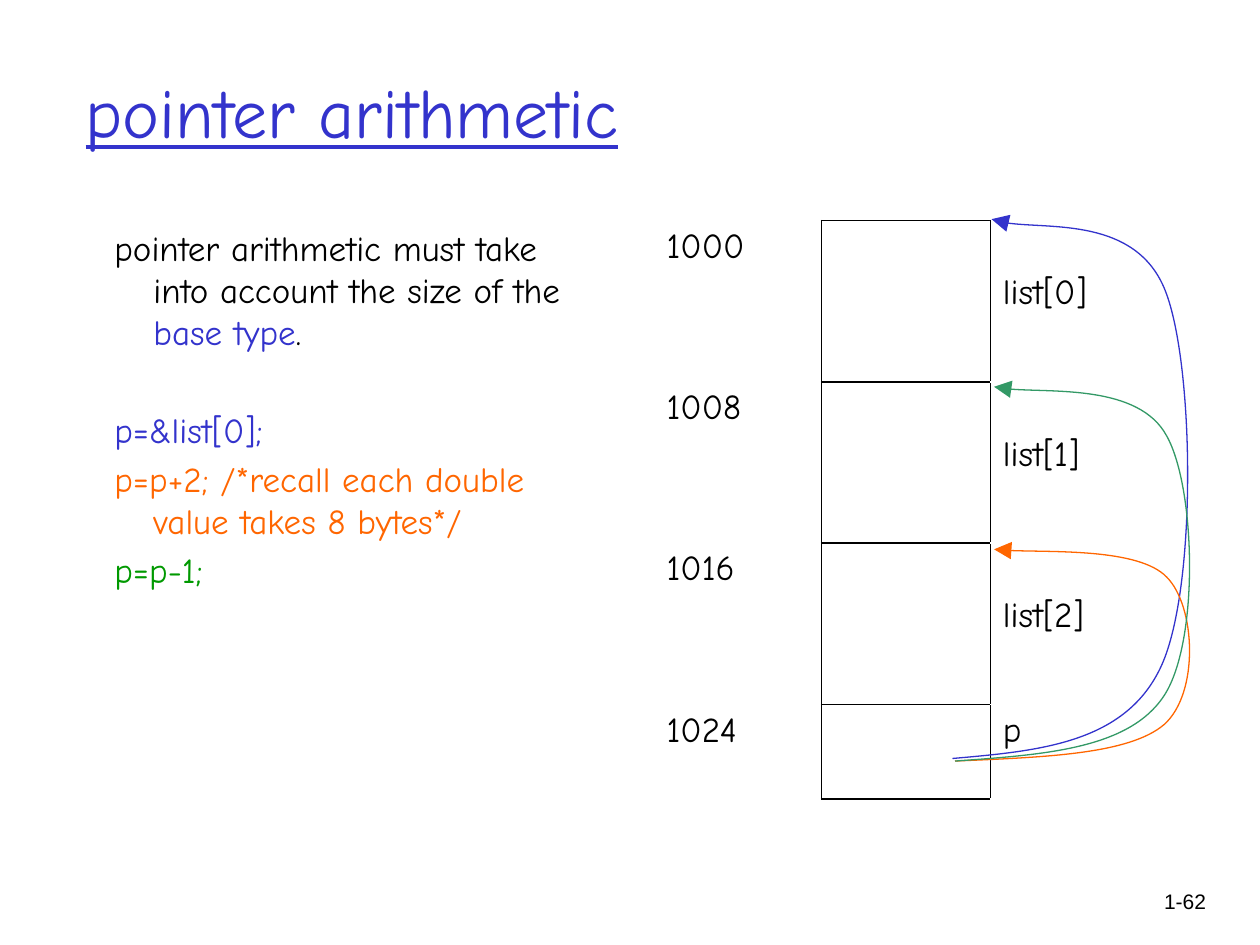
from lxml import etree
from pptx import Presentation
from pptx import util as u
from pptx.dml.color import RGBColor
from pptx.enum import text as t
from pptx.oxml.ns import qn

BLACK = RGBColor(0, 0, 0)
BLUE = RGBColor(0x33, 0x33, 0xCC)
ORANGE = RGBColor(0xFF, 0x66, 0x00)
GREEN = RGBColor(0x00, 0x99, 0x00)
TEAL = RGBColor(0x33, 0x99, 0x66)
FONT = "Comic Neue"


def style(font, size, color, name=FONT):
    font.size, font.name = u.Pt(size), name
    font.color.rgb = color


def box(left, top, width, height):
    """Add a wrapping text box, in inches, and return its text frame."""
    shape = slide.shapes.add_textbox(*map(u.Inches, (left, top, width, height)))
    shape.text_frame.word_wrap = True
    return shape.text_frame


deck = Presentation()
deck.slide_width, deck.slide_height = u.Inches(10), u.Inches(7.5)
slide = deck.slides.add_slide(deck.slide_layouts[5])

# Title
title = slide.shapes.title
title.left, title.top = u.Inches(0.58), u.Inches(0.25)
title.width, title.height = u.Inches(8.5), u.Inches(1.25)
title.text_frame.text = "pointer arithmetic"
title.text_frame.vertical_anchor = t.MSO_ANCHOR.MIDDLE
head = title.text_frame.paragraphs[0]
head.alignment = t.PP_ALIGN.LEFT
style(head.font, 40, BLUE)
head.font.underline = True

# Page number
page = box(8.93, 7, 0.74, 0.5).paragraphs[0]
page.text = "1-62"
page.alignment = t.PP_ALIGN.RIGHT
style(page.font, 12, BLACK, "Arial")

# Explanation and code: space before in points, then runs
lines = [
    (4, [("pointer arithmetic must take into account the size of the ", BLACK),
         ("base type", BLUE), (".", BLACK)]),
    (32, [("p=&list[0];", BLUE)]),
    (4, [("p=p+2; /*recall each double value takes 8 bytes*/", ORANGE)]),
    (4, [("p=p-1;", GREEN)]),
]
body = box(0.31, 1.75, 4.44, 5.08)
for i, (gap, runs) in enumerate(lines):
    para = body.add_paragraph() if i else body.paragraphs[0]
    para.space_before = u.Pt(gap)
    props = para._p.get_or_add_pPr()
    props.set("marL", str(u.Inches(0.81)))
    props.set("indent", str(u.Inches(-0.31)))
    for words, color in runs:
        run = para.add_run()
        run.text = words
        style(run.font, 20, color)

# Memory table: address, cell, label
rows = [("1000", "list[0]"), ("1008", "list[1]"), ("1016", "list[2]"), ("1024", "p")]
cols, highs = (1.33, 1.34, 1.76), (1.28, 1.28, 1.28, 0.75)
grid = slide.shapes.add_table(4, 3, u.Inches(5.19), u.Inches(1.75),
                              u.Inches(sum(cols)), u.Inches(sum(highs))).table
grid.first_row = grid.horz_banding = False
for col, width in zip(grid.columns, cols):
    col.width = u.Inches(width)
for r, (addr, label) in enumerate(rows):
    grid.rows[r].height = u.Inches(highs[r])
    for c, (words, sides) in enumerate([(addr, "R"), ("", "LRTB"), (label, "L")]):
        cell = grid.cell(r, c)
        cell.text = words
        style(cell.text_frame.paragraphs[0].font, 20, BLACK)
        if words.startswith("list"):
            cell.margin_top = u.Inches(0.42)
        props = cell._tc.get_or_add_tcPr()
        for side in sides:
            edge = etree.SubElement(props, qn("a:ln" + side), w=str(u.Pt(1)))
            fill = etree.SubElement(edge, qn("a:solidFill"))
            etree.SubElement(fill, qn("a:srgbClr"), val=str(BLACK))
        cell.fill.background()

# Pointer curves in hundredths of an inch (the pen takes whole numbers only):
# a start, then three control points for each Bézier part
curves = [
    (BLUE, [(756, 602), (825, 596), (894, 590), (922, 528), (950, 466),
            (948, 290), (925, 231), (902, 172), (810, 184), (787, 174)]),
    (ORANGE, [(758, 604), (827, 601), (896, 599), (924, 575), (952, 550),
              (949, 481), (926, 458), (904, 435), (812, 439), (789, 436)]),
    (TEAL, [(758, 604), (827, 599), (896, 595), (924, 552), (952, 509),
            (949, 387), (926, 346), (904, 305), (812, 313), (789, 307)]),
]
for color, dots in curves:
    pen = slide.shapes.build_freeform(*dots[0], scale=u.Inches(0.01))
    pen.add_line_segments(dots[1:], close=False)
    curve = pen.convert_to_shape()
    curve.shadow.inherit = False
    curve.fill.background()
    curve.line.color.rgb = color
    curve.line.width = u.Pt(0.75)
    etree.SubElement(curve.line._get_or_add_ln(), qn("a:tailEnd"),
                     type="triangle", w="lg", len="lg")
    # Join each three straight steps into one cubic Bézier part
    steps = list(curve._element.iter(qn("a:lnTo")))
    for i in range(0, len(steps), 3):
        bend = etree.SubElement(steps[i].getparent(), qn("a:cubicBezTo"))
        for step in steps[i:i + 3]:
            bend.append(step[0])
            step.getparent().remove(step)

deck.save("out.pptx")
